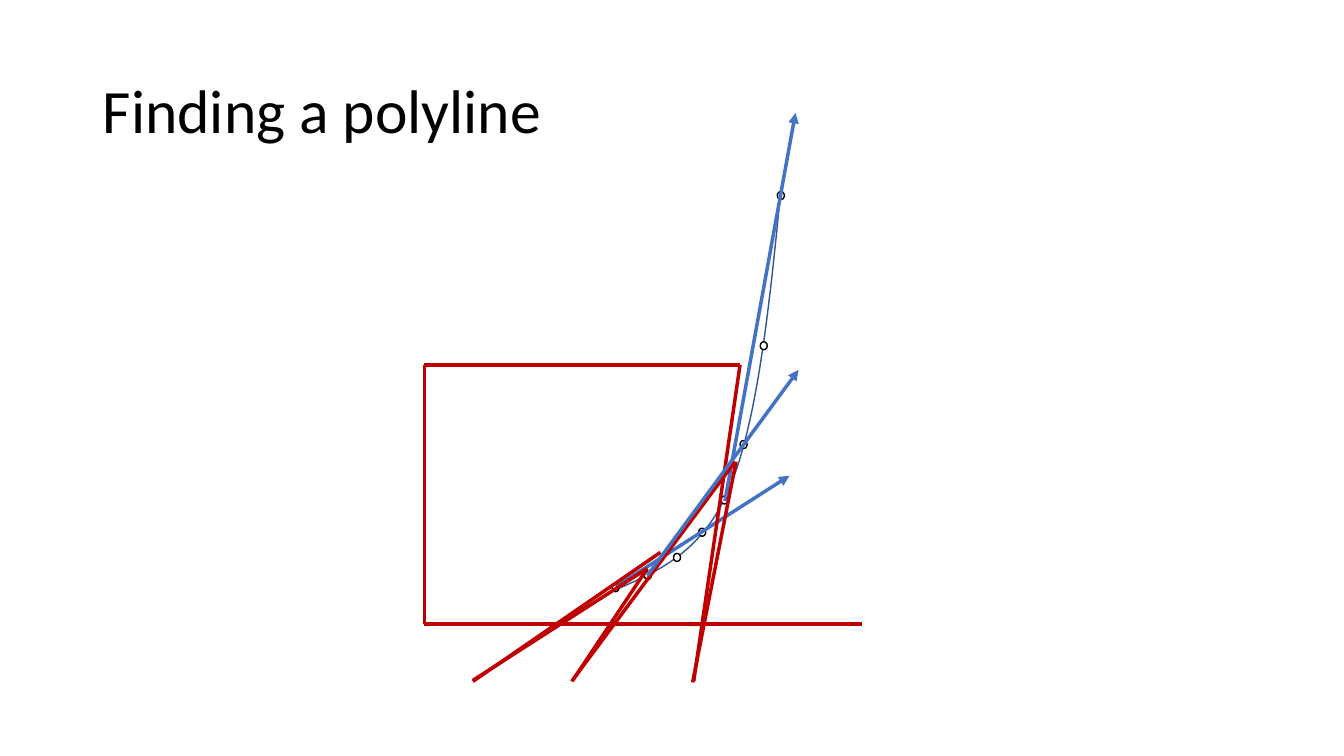
import pptx
import pptx.dml.color
import pptx.enum.shapes
import pptx.enum.text
import pptx.oxml
import pptx.util
from pptx.oxml.ns import qn

PX = 9144  # EMU per px, 100 px to the inch
RED, BLUE, NAVY, BLACK, WHITE = "C00000", "4472C4", "325491", "000000", "FFFFFF"


def color(hex_code):
    return pptx.dml.color.RGBColor.from_string(hex_code)


def draw_line(start, end, hex_code, arrow=False):
    """Draw a straight line, with an arrowhead at its end if asked."""
    line = page.shapes.add_connector(
        pptx.enum.shapes.MSO_CONNECTOR.STRAIGHT, *(v * PX for v in start + end))
    line.line.color.rgb = color(hex_code)
    line.line.width = pptx.util.Pt(2.5)
    if arrow:
        head = pptx.oxml.xmlchemy.OxmlElement("a:tailEnd")
        head.set("type", "triangle")
        line.line._get_or_add_ln().append(head)
    line._element.spPr.append(pptx.oxml.xmlchemy.OxmlElement("a:effectLst"))


deck = pptx.Presentation()
deck.slide_width, deck.slide_height = 1333 * PX, 750 * PX
page = deck.slides.add_slide(deck.slide_layouts[5])

# Title
title = page.shapes.title
place = {"left": 92, "top": 40, "width": 1150, "height": 145}
for name, value in place.items():
    setattr(title, name, value * PX)
title.text_frame.vertical_anchor = pptx.enum.text.MSO_ANCHOR.MIDDLE
para = title.text_frame.paragraphs[0]
para.alignment = pptx.enum.text.PP_ALIGN.LEFT
para.line_spacing = 0.9
span = para.add_run()
span.text = "Finding a polyline"
for name, value in {"name": "Calibri", "size": pptx.util.Pt(44)}.items():
    setattr(span.font, name, value)
span.font.color.rgb = color(BLACK)

# Smooth curve: two cubic Bézier pieces, sampled finely
pieces = [
    [(611, 585), (654, 566), (697, 548), (724, 483)],
    [(724, 483), (751, 418), (763, 306), (774, 194)],
]
STEPS = 24
curve_points = []
for piece in pieces:
    for step in range(1, STEPS + 1):
        t = step / STEPS
        weights = ((1 - t) ** 3, 3 * t * (1 - t) ** 2, 3 * t ** 2 * (1 - t), t ** 3)
        curve_points.append(tuple(
            round(PX * sum(w * point[axis] for w, point in zip(weights, piece)))
            for axis in (0, 1)))
builder = page.shapes.build_freeform(*(v * PX for v in pieces[0][0]))
builder.add_line_segments(curve_points, close=False)
curve = builder.convert_to_shape()
curve.shadow.inherit = False
curve.fill.background()
curve.line.color.rgb = color(NAVY)
curve.line.width = pptx.util.Pt(1)

# Sample points on the curve
DOT_WIDTH, DOT_HEIGHT = 7, 8
dot_corners = [(607, 579), (639, 567), (668, 549), (693, 524),
               (715, 492), (734, 437), (754, 339), (771, 190)]
for left, top in dot_corners:
    dot = page.shapes.add_shape(
        pptx.enum.shapes.MSO_SHAPE.OVAL,
        left * PX, top * PX, DOT_WIDTH * PX, DOT_HEIGHT * PX)
    dot.shadow.inherit = False
    dot.fill.solid()
    dot.fill.fore_color.rgb = color(WHITE)
    dot.line.color.rgb = color(BLACK)
    dot.line.width = pptx.util.Pt(1)

# Direction arrows below, red outline, then the arrow on top
draw_line((611, 582), (783, 472), BLUE, arrow=True)
draw_line((719, 497), (789, 112), BLUE, arrow=True)

outline = [
    ((730, 458), (687, 677)),
    ((729, 458), (567, 676)),
    ((642, 564), (568, 675)),
    ((642, 564), (469, 675)),
    ((469, 676), (655, 548)),
    ((421, 362), (734, 362)),
    ((734, 362), (688, 676)),
    ((421, 362), (421, 619)),
    ((421, 619), (855, 619)),
]
for start, end in outline:
    draw_line(start, end, RED)

draw_line((642, 571), (792, 367), BLUE, arrow=True)

deck.save("out.pptx")
